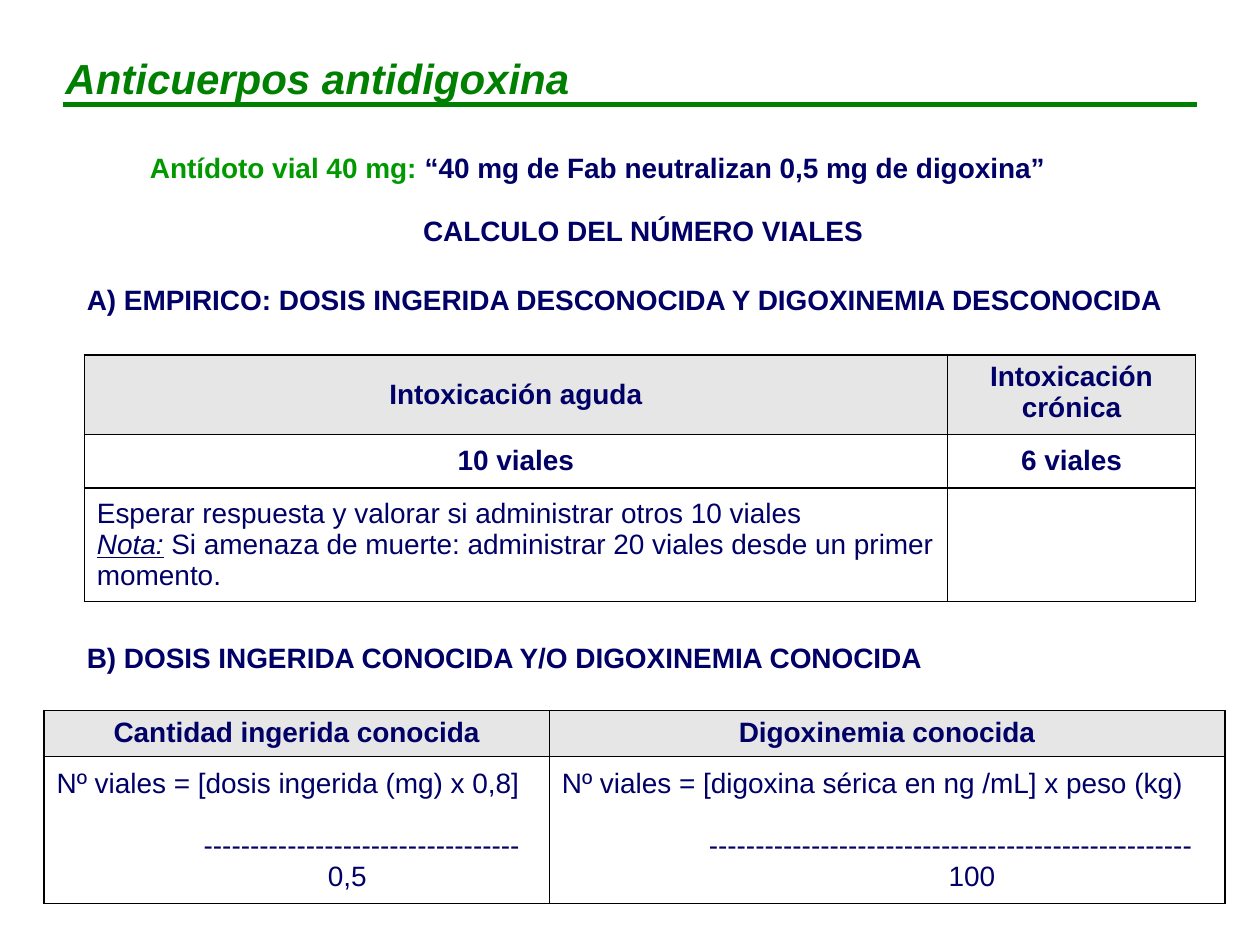
from lxml.etree import SubElement
from pptx import Presentation
from pptx.dml.color import RGBColor
from pptx.enum.shapes import MSO_CONNECTOR
from pptx.enum.text import MSO_ANCHOR, MSO_AUTO_SIZE, PP_ALIGN
from pptx.oxml import parse_xml
from pptx.oxml.ns import nsdecls, qn
from pptx.util import Pt

GREEN, LIME, NAVY = "008000", "009900", "000066"
GREY, WHITE, BLACK = "E6E6E6", "FFFFFF", "000000"
LEFT, CENTER = PP_ALIGN.LEFT, PP_ALIGN.CENTER
TOP, MIDDLE = MSO_ANCHOR.TOP, MSO_ANCHOR.MIDDLE


def rgb(value):
    return RGBColor.from_string(value)


def par(*runs, align=LEFT, before=0, indent=0):
    """A paragraph: runs of (text, format) plus its layout."""
    return runs, align, before, indent


class SlideBuilder:
    base = {"name": "Arial", "size": Pt(16), "bold": True}

    def __init__(self, prs):
        self.s = prs.slides.add_slide(prs.slide_layouts[5])

    def fill_text(self, tf, pars):
        for i, (runs, align, before, indent) in enumerate(pars):
            p = tf.paragraphs[0] if i == 0 else tf.add_paragraph()
            p.alignment = align
            if before:
                p.space_before = Pt(before)
            if indent:
                p._p.get_or_add_pPr().set("marL", str(Pt(indent)))
            for text, fmt in runs:
                r = p.add_run()
                r.text = text
                style = {**self.base, "color": NAVY, **fmt}
                r.font.color.rgb = rgb(style.pop("color"))
                for key, value in style.items():
                    setattr(r.font, key, value)

    def place(self, sp, box, pars):
        sp.left, sp.top, sp.width, sp.height = map(Pt, box)
        tf = sp.text_frame
        tf.word_wrap = True
        tf.auto_size = MSO_AUTO_SIZE.NONE
        tf.vertical_anchor = TOP
        self.fill_text(tf, pars)

    def title(self, box, text):
        fmt = {"size": Pt(24), "italic": True, "color": GREEN}
        self.place(self.s.shapes.title, box, [par((text, fmt))])

    def text(self, box, *pars):
        self.place(self.s.shapes.add_textbox(*map(Pt, box)), box, pars)

    def rule(self, x1, x2, y):
        line = self.s.shapes.add_connector(
            MSO_CONNECTOR.STRAIGHT, Pt(x1), Pt(y), Pt(x2), Pt(y))
        line.line.color.rgb = rgb(GREEN)
        line.line.width = Pt(3)
        SubElement(line._element.spPr, qn("a:effectLst"))

    def border(self, cell):
        tcPr = cell._tc.get_or_add_tcPr()
        for i, side in enumerate("LRTB"):
            tcPr.insert(i, parse_xml(
                f'<a:ln{side} {nsdecls("a")} w="{Pt(1)}"><a:solidFill>'
                f'<a:srgbClr val="{BLACK}"/></a:solidFill></a:ln{side}>'))

    def table(self, x, y, cols, rows, cells):
        tbl = self.s.shapes.add_table(
            len(rows), len(cols), Pt(x), Pt(y), Pt(sum(cols)), Pt(sum(rows))).table
        tbl.first_row = tbl.horz_banding = False
        for col, width in zip(tbl.columns, cols):
            col.width = Pt(width)
        for i, height in enumerate(rows):
            tbl.rows[i].height = Pt(height)
            for j, (pars, anchor) in enumerate(cells[i]):
                cell = tbl.cell(i, j)
                cell.vertical_anchor = anchor
                cell.fill.solid()
                cell.fill.fore_color.rgb = rgb(WHITE if i else GREY)
                self.border(cell)
                self.fill_text(cell.text_frame, pars)


def head(text, anchor=MIDDLE):
    return [par((text, {}), align=CENTER)], anchor


def formula(numerator, dashes, divisor, indent):
    """Numerator, dashed fraction bar and indented divisor."""
    plain = {"bold": False}
    return [par((numerator, plain)),
            par(("-" * dashes, plain), before=18, indent=84),
            par((divisor, plain), indent=indent)], MIDDLE


def main():
    prs = Presentation()
    prs.slide_width, prs.slide_height = Pt(720), Pt(540)
    b = SlideBuilder(prs)

    # Title and rule
    b.title((30.2, 26.5, 486, 36), "Anticuerpos antidigoxina")
    b.rule(36, 684, 59.8)

    # Product and section headings
    b.text((24, 82.3, 635, 26),
           par(("Antídoto vial 40 mg: ", {"color": LIME}),
               ("“40 mg de Fab neutralizan 0,5 mg de digoxina”", {}), align=CENTER))
    b.text((42.5, 118.4, 650, 64),
           par(("CALCULO DEL NÚMERO VIALES", {}), align=CENTER),
           par(("A) EMPIRICO: DOSIS INGERIDA DESCONOCIDA Y DIGOXINEMIA DESCONOCIDA", {}),
               before=20.4))
    b.text((42.5, 362.3, 495, 26),
           par(("B) DOSIS INGERIDA CONOCIDA Y/O DIGOXINEMIA CONOCIDA", {})))

    # Empirical dose
    plain = {"bold": False}
    advice = [
        par(("Esperar respuesta y valorar si administrar otros 10 viales", plain)),
        par(("Nota:", {**plain, "italic": True, "underline": True}),
            (" Si amenaza de muerte: administrar 20 viales desde un primer momento.", plain))]
    b.table(48.2, 203, (493.2, 141.8), (45.2, 30.6, 65), [
        [head("Intoxicación aguda"), head("Intoxicación crónica", TOP)],
        [head("10 viales"), head("6 viales")],
        [(advice, MIDDLE), ([], TOP)]])

    # Calculated dose
    b.table(25.2, 406, (288.7, 386), (26.4, 84), [
        [head("Cantidad ingerida conocida", TOP), head("Digoxinemia conocida", TOP)],
        [formula("Nº viales = [dosis ingerida (mg) x 0,8]", 34, "0,5", 155),
         formula("Nº viales = [digoxina sérica en ng /mL] x peso (kg)", 52, "100", 221)]])

    prs.save("out.pptx")


if __name__ == "__main__":
    main()
